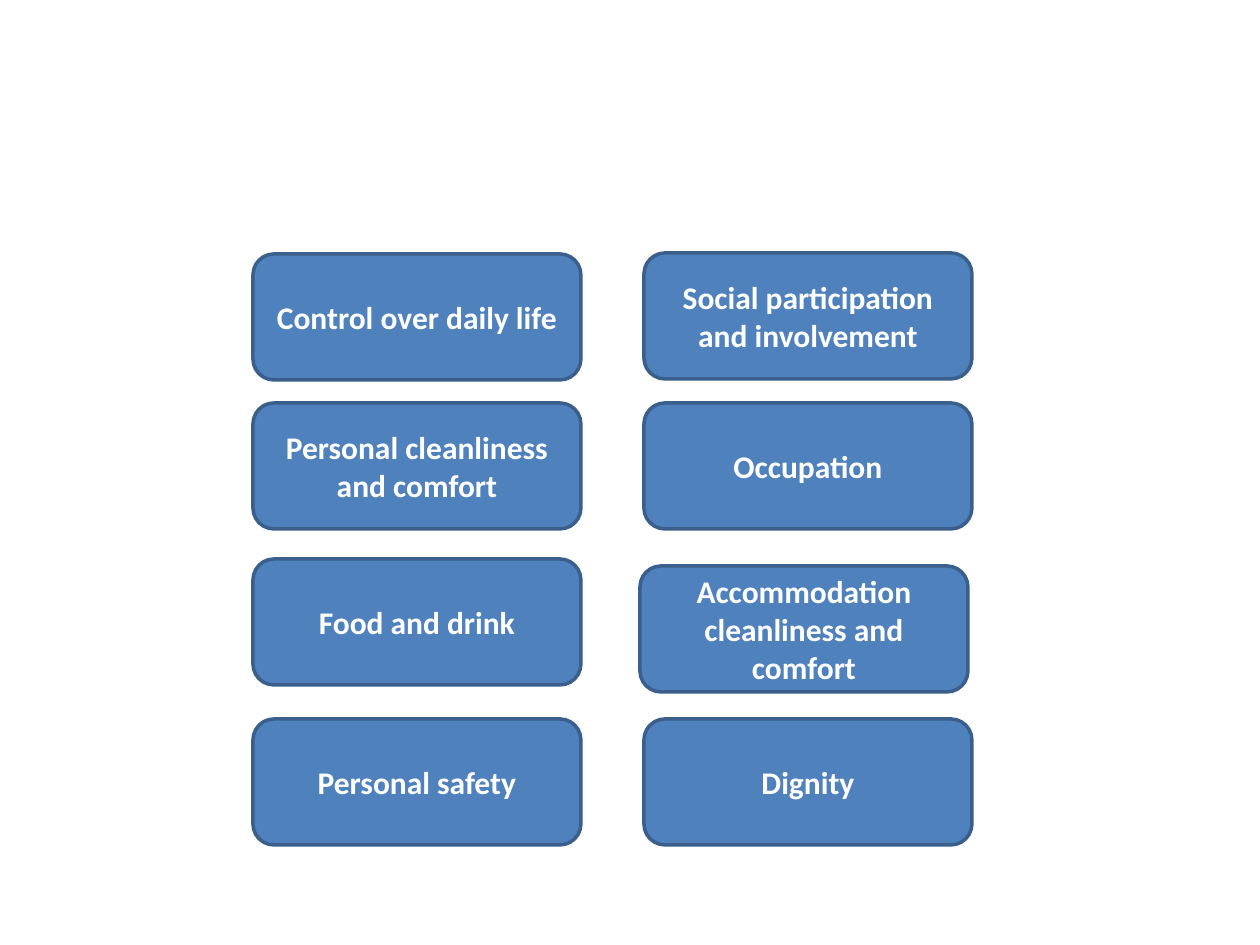
from dataclasses import dataclass

from pptx import Presentation
from pptx.dml.color import RGBColor
from pptx.enum.shapes import MSO_SHAPE
from pptx.enum.text import MSO_ANCHOR, PP_ALIGN
from pptx.util import Emu, Pt

ROUNDED = MSO_SHAPE.ROUNDED_RECTANGLE
MIDDLE = MSO_ANCHOR.MIDDLE
CENTER = PP_ALIGN.CENTER
BLANK_LAYOUT = 6
PX_PER_INCH = 126


@dataclass(frozen=True)
class Theme:
    font: str = "Calibri"
    size: Pt = Pt(18)
    text: RGBColor = RGBColor(0xFF, 0xFF, 0xFF)
    fill: RGBColor = RGBColor(0x4F, 0x81, 0xBD)
    line: RGBColor = RGBColor(0x3A, 0x5F, 0x8C)
    line_width: Pt = Pt(2)


THEME = Theme()

CARD_WIDTH, CARD_HEIGHT = 328, 126
GRID_LEFT, GRID_TOP = 253, 253
COLUMN_STEP = 391
ROW_OFFSETS = (0, 150, 306, 466)
DOMAINS = (
    ("Control over daily life", "Social participation and involvement"),
    ("Personal cleanliness and comfort", "Occupation"),
    ("Food and drink", "Accommodation cleanliness and comfort"),
    ("Personal safety", "Dignity"),
)
NUDGES = {(0, 0): (0, 1), (2, 1): (-4, 7)}


def px(n):
    return Emu(round(n * 914400 / PX_PER_INCH))


def add_card(slide, left, top, width, height, text):
    sp = slide.shapes.add_shape(ROUNDED, px(left), px(top), px(width), px(height))
    sp.shadow.inherit = False
    sp.fill.solid()
    sp.fill.fore_color.rgb = THEME.fill
    sp.line.color.rgb = THEME.line
    sp.line.width = THEME.line_width
    tf = sp.text_frame
    tf.word_wrap = True
    tf.vertical_anchor = MIDDLE
    p = tf.paragraphs[0]
    p.text = text
    p.alignment = CENTER
    p.font.name = THEME.font
    p.font.size = THEME.size
    p.font.bold = True
    p.font.color.rgb = THEME.text


def add_domain_grid(slide, left, top):
    for row, (offset, labels) in enumerate(zip(ROW_OFFSETS, DOMAINS)):
        for column, label in enumerate(labels):
            dx, dy = NUDGES.get((row, column), (0, 0))
            add_card(slide, left + column * COLUMN_STEP + dx, top + offset + dy,
                     CARD_WIDTH, CARD_HEIGHT, label)


def main():
    prs = Presentation()
    prs.slide_width, prs.slide_height = px(1260), px(945)
    slide = prs.slides.add_slide(prs.slide_layouts[BLANK_LAYOUT])
    add_domain_grid(slide, GRID_LEFT, GRID_TOP)
    prs.save("out.pptx")


if __name__ == "__main__":
    main()
